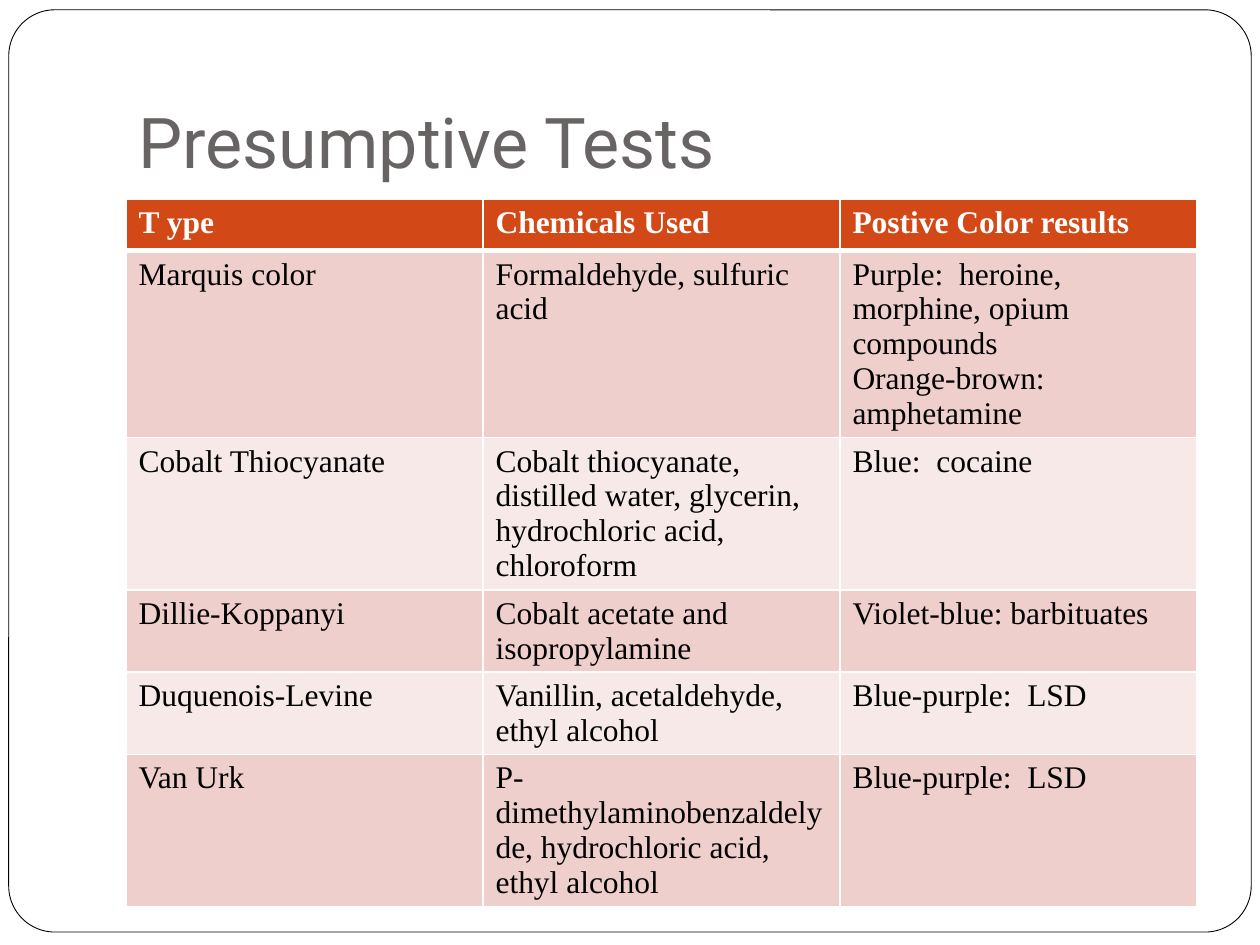
from dataclasses import dataclass

from pptx import Presentation
from pptx.dml.color import RGBColor
from pptx.enum.shapes import MSO_SHAPE as Shape
from pptx.enum.text import MSO_ANCHOR as Anchor, PP_ALIGN as Align
from pptx.oxml import parse_xml
from pptx.oxml.ns import nsdecls
from pptx.util import Pt


@dataclass(frozen=True)
class Theme:
    white: str = "FFFFFF"
    black: str = "000000"
    title: str = "696464"
    header: str = "D34817"
    bands: tuple = ("EFCFCC", "F7E9E8")
    title_font: str = "Roboto"
    body_font: str = "Times New Roman"
    title_size: int = 40
    body_size: int = 18


theme = Theme()


def add_run(paragraph, text, font, size, color, bold=False):
    run = paragraph.add_run()
    run.text = text
    run.font.name = font
    run.font.size = Pt(size)
    run.font.bold = bold
    run.font.color.rgb = RGBColor.from_string(color)


def add_borders(cell, widths):
    properties = cell._tc.get_or_add_tcPr()
    for index, (side, width) in enumerate(widths.items()):
        properties.insert(index, parse_xml(
            f'<a:{side} {nsdecls("a")} w="{Pt(width)}"><a:solidFill>'
            f'<a:srgbClr val="{theme.white}"/></a:solidFill></a:{side}>'))


presentation = Presentation()
presentation.slide_width, presentation.slide_height = Pt(720), Pt(540)
slide = presentation.slides.add_slide(presentation.slide_layouts[5])

# Rounded frame
frame = slide.shapes.add_shape(Shape.ROUNDED_RECTANGLE, Pt(5), Pt(5.6), Pt(710), Pt(527))
frame.adjustments[0] = 0.05
frame.shadow.inherit = False
frame.fill.solid()
frame.fill.fore_color.rgb = RGBColor.from_string(theme.white)
frame.line.color.rgb = RGBColor.from_string(theme.black)
frame.line.width = Pt(0.5)

# Title, brought in front of the frame
title = slide.shapes.title
slide.shapes._spTree.append(title._element)
title.left, title.top, title.width, title.height = Pt(72), Pt(21.6), Pt(612), Pt(90)
title_frame = title.text_frame
title_frame.vertical_anchor = Anchor.BOTTOM
title_frame.margin_left = title_frame.margin_right = title_frame.margin_bottom = Pt(7.2)
title_frame.margin_top = Pt(3.6)
title_frame.paragraphs[0].alignment = Align.LEFT
add_run(title_frame.paragraphs[0], "Presumptive Tests",
        theme.title_font, theme.title_size, theme.title)

# Table of tests; a line break in a text starts a new paragraph
rows = [
    ("T ype", "Chemicals Used", "Postive Color results"),
    ("Marquis color", "Formaldehyde, sulfuric acid",
     "Purple:  heroine, morphine, opium compounds\nOrange-brown:  amphetamine"),
    ("Cobalt Thiocyanate",
     "Cobalt thiocyanate, distilled water, glycerin, hydrochloric acid, chloroform",
     "Blue:  cocaine"),
    ("Dillie-Koppanyi", "Cobalt acetate and isopropylamine", "Violet-blue: barbituates"),
    ("Duquenois-Levine", "Vanillin, acetaldehyde, ethyl alcohol", "Blue-purple:  LSD"),
    ("Van Urk", "P-dimethylaminobenzaldelyde, hydrochloric acid, ethyl alcohol",
     "Blue-purple:  LSD"),
]
row_height = 29.2
table = slide.shapes.add_table(len(rows), len(rows[0]), Pt(72), Pt(114),
                               Pt(612), Pt(row_height * len(rows))).table
for row_index, texts in enumerate(rows):
    table.rows[row_index].height = Pt(row_height)
    is_header = row_index == 0
    fill = theme.header if is_header else theme.bands[(row_index - 1) % 2]
    color = theme.white if is_header else theme.black
    borders = {"lnL": 1, "lnR": 1, "lnT": 3 if row_index == 1 else 1,
               "lnB": 3 if is_header else 1}
    for column_index, text in enumerate(texts):
        cell = table.cell(row_index, column_index)
        cell.fill.solid()
        cell.fill.fore_color.rgb = RGBColor.from_string(fill)
        add_borders(cell, borders)
        for line_index, line in enumerate(text.split("\n")):
            text_frame = cell.text_frame
            paragraph = text_frame.add_paragraph() if line_index else text_frame.paragraphs[0]
            add_run(paragraph, line, theme.body_font, theme.body_size, color, is_header)

presentation.save("out.pptx")
